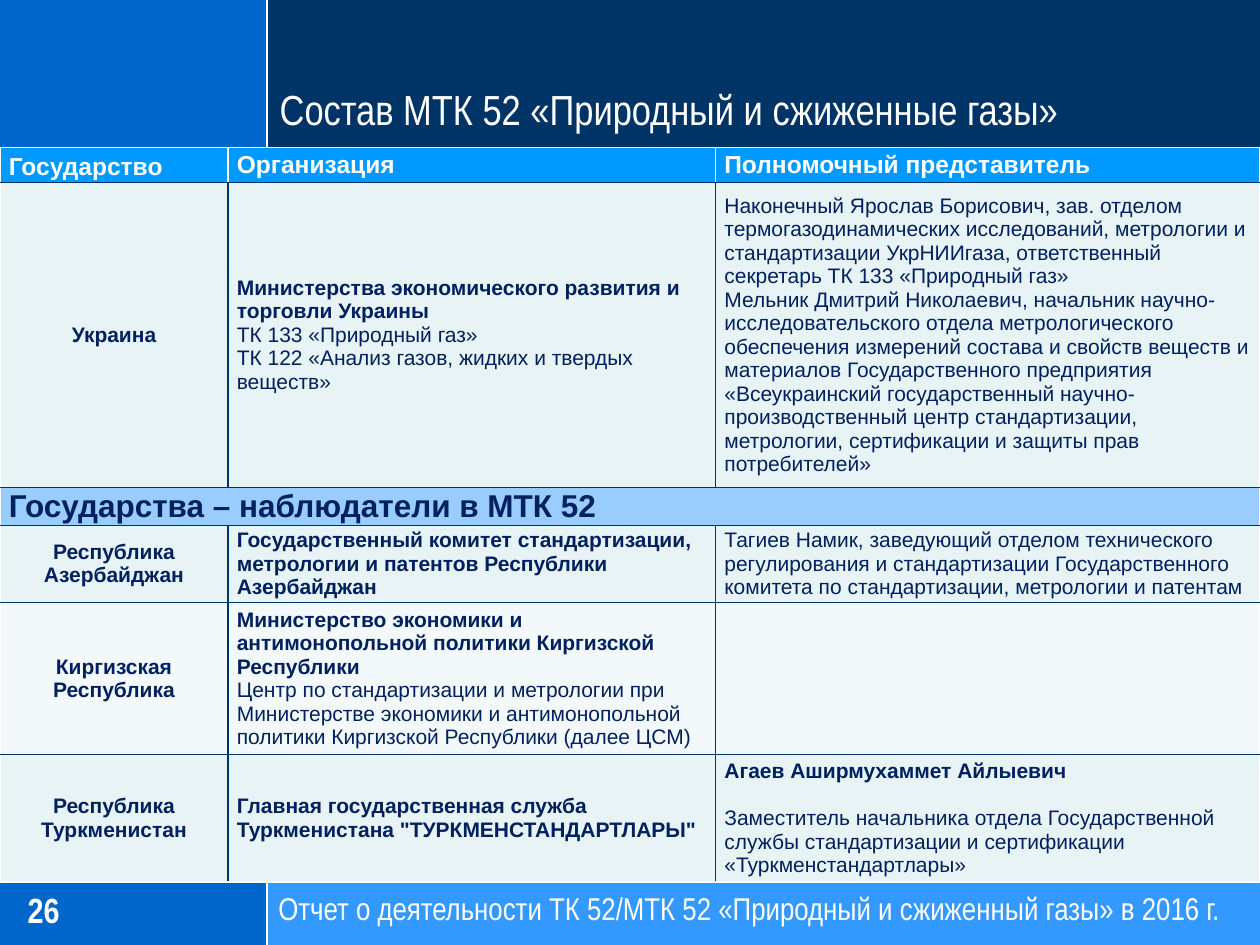
from lxml.etree import SubElement
from pptx import Presentation
from pptx.dml.color import RGBColor
from pptx.enum.shapes import MSO_CONNECTOR, MSO_SHAPE
from pptx.enum.text import MSO_ANCHOR, PP_ALIGN
from pptx.oxml.ns import qn
from pptx.util import Inches, Pt

WHITE, NAVY, BLUE, SKY = "FFFFFF", "003366", "0066CC", "3399FF"
HEADER_FILL, SECTION_FILL, ROW_FILL, PALE_FILL = "0099FF", "99CCFF", "E7F3F4", "F3F9FA"
TEXT_COLOR = "002060"
SPLIT, HEADER_BOTTOM, FOOTER_TOP = 2.12, 1.18, 6.91

COLUMN_WIDTHS = [1.81, 3.87, 4.32]
ROW_HEIGHTS = [0.28, 2.42, 0.3, 0.61, 1.21, 1.01]
ROW_FILLS = [HEADER_FILL, ROW_FILL, SECTION_FILL, ROW_FILL, PALE_FILL, ROW_FILL]
HEADER_ROW, SECTION_ROW = 0, 2

# Each cell is a list of paragraphs: (text, bold)
ROWS = [
    [[("Государство", True)], [("Организация", True)],
     [("Полномочный представитель", True)]],
    [[("Украина", True)],
     [("Министерства экономического развития и торговли Украины", True),
      ("ТК 133 «Природный газ»", False),
      ("ТК 122 «Анализ газов, жидких и твердых веществ»", False)],
     [("Наконечный Ярослав Борисович, зав. отделом термогазодинамических "
       "исследований, метрологии и стандартизации УкрНИИгаза, ответственный "
       "секретарь ТК 133 «Природный газ»", False),
      ("Мельник Дмитрий Николаевич, начальник научно-исследовательского отдела "
       "метрологического обеспечения измерений состава и свойств веществ и "
       "материалов Государственного предприятия «Всеукраинский государственный "
       "научно-производственный центр стандартизации, метрологии, сертификации "
       "и защиты прав потребителей»", False)]],
    [[("Государства – наблюдатели в МТК 52", True)], [], []],
    [[("Республика Азербайджан", True)],
     [("Государственный комитет стандартизации, метрологии и патентов "
       "Республики Азербайджан", True)],
     [("Тагиев Намик, заведующий отделом технического регулирования и "
       "стандартизации Государственного комитета по стандартизации, метрологии "
       "и патентам", False)]],
    [[("Киргизская Республика", True)],
     [("Министерство экономики и антимонопольной политики Киргизской "
       "Республики", True),
      ("Центр по стандартизации и метрологии при Министерстве экономики и "
       "антимонопольной политики Киргизской Республики (далее ЦСМ)", False)],
     []],
    [[("Республика Туркменистан", True)],
     [("Главная государственная служба Туркменистана "
       "\"ТУРКМЕНСТАНДАРТЛАРЫ\"", True)],
     [("Агаев Аширмухаммет Айлыевич", True),
      ("Заместитель начальника отдела Государственной службы стандартизации и "
       "сертификации «Туркменстандартлары»", False)]],
]


def color(value):
    return RGBColor.from_string(value)


def add_band(slide, left, top, width, height, fill):
    shape = slide.shapes.add_shape(
        MSO_SHAPE.RECTANGLE, Inches(left), Inches(top), Inches(width), Inches(height))
    shape.shadow.inherit = False
    shape.fill.solid()
    shape.fill.fore_color.rgb = color(fill)
    shape.line.fill.background()


def add_rule(slide, x1, y1, x2, y2):
    line = slide.shapes.add_connector(
        MSO_CONNECTOR.STRAIGHT, Inches(x1), Inches(y1), Inches(x2), Inches(y2))
    line.line.color.rgb = color(WHITE)
    line.line.width = Pt(1.25)
    SubElement(line._element.spPr, qn("a:effectLst"))


def add_run(paragraph, text, size, font_name, font_color, bold=False):
    run = paragraph.add_run()
    run.text = text
    run.font.size = Pt(size)
    run.font.name = font_name
    run.font.bold = bold
    run.font.color.rgb = color(font_color)


def add_label(slide, left, top, width, height, text, size,
              anchor=MSO_ANCHOR.MIDDLE, align=PP_ALIGN.LEFT, bold=False):
    box = slide.shapes.add_textbox(Inches(left), Inches(top), Inches(width), Inches(height))
    frame = box.text_frame
    frame.word_wrap = True
    frame.vertical_anchor = anchor
    frame.margin_left = frame.margin_right = frame.margin_top = frame.margin_bottom = 0
    paragraph = frame.paragraphs[0]
    paragraph.alignment = align
    add_run(paragraph, text, size, "Arial Narrow", WHITE, bold)


def set_borders(cell, **edges):
    """Give each named edge (L, R, T, B) a 1 pt line; call before setting the fill."""
    properties = cell._tc.get_or_add_tcPr()
    for edge in "LRTB":
        line = SubElement(properties, qn(f"a:ln{edge}"), w=str(Pt(1)))
        fill = SubElement(line, qn("a:solidFill"))
        SubElement(fill, qn("a:srgbClr"), val=edges[edge])


def fill_cell(cell, row, column, paragraphs):
    last_row, last_column = len(ROWS) - 1, len(COLUMN_WIDTHS) - 1
    inner = WHITE if row == HEADER_ROW else NAVY
    set_borders(
        cell,
        L=WHITE if column == 0 else inner,
        R=WHITE if column == last_column or row == SECTION_ROW else inner,
        T=WHITE if row == 0 else NAVY,
        B=WHITE if row == last_row else NAVY)
    cell.fill.solid()
    cell.fill.fore_color.rgb = color(ROW_FILLS[row])
    cell.vertical_anchor = MSO_ANCHOR.MIDDLE
    cell.margin_left = cell.margin_right = Inches(0.07)
    cell.margin_top = cell.margin_bottom = 0

    size = {HEADER_ROW: 14, SECTION_ROW: 18}.get(row, 12)
    font_color = WHITE if row == HEADER_ROW else TEXT_COLOR
    centered = column == 0 and row not in (HEADER_ROW, SECTION_ROW)
    frame = cell.text_frame
    for index, (text, bold) in enumerate(paragraphs):
        paragraph = frame.paragraphs[0] if index == 0 else frame.add_paragraph()
        paragraph.alignment = PP_ALIGN.CENTER if centered else PP_ALIGN.LEFT
        if row == HEADER_ROW and column == 0:
            paragraph.line_spacing = 1.15
        if index and (row, column) == (last_row, last_column):
            paragraph.space_before = Pt(13.5)
        add_run(paragraph, text, size, "Arial", font_color, bold)


def add_members_table(slide):
    table = slide.shapes.add_table(
        len(ROWS), len(COLUMN_WIDTHS), Inches(0), Inches(1.17),
        Inches(sum(COLUMN_WIDTHS)), Inches(sum(ROW_HEIGHTS))).table
    for column, width in zip(table.columns, COLUMN_WIDTHS):
        column.width = Inches(width)
    for row, height in zip(table.rows, ROW_HEIGHTS):
        row.height = Inches(height)
    table.cell(SECTION_ROW, 0).merge(table.cell(SECTION_ROW, len(COLUMN_WIDTHS) - 1))
    for row, cells in enumerate(ROWS):
        for column, paragraphs in enumerate(cells):
            fill_cell(table.cell(row, column), row, column, paragraphs)


def main():
    presentation = Presentation()
    presentation.slide_width, presentation.slide_height = Inches(10), Inches(7.5)
    slide = presentation.slides.add_slide(presentation.slide_layouts[6])

    for top, bottom, right_fill in ((FOOTER_TOP, 7.5, SKY), (0, HEADER_BOTTOM, NAVY)):
        add_band(slide, 0, top, SPLIT, bottom - top, BLUE)
        add_band(slide, SPLIT, top, 10 - SPLIT, bottom - top, right_fill)
        add_rule(slide, SPLIT, top, SPLIT, bottom)
    for y in (FOOTER_TOP, HEADER_BOTTOM):
        add_rule(slide, 0, y, 10, y)

    add_label(slide, 2.22, 0.56, 7.76, 0.5, "Состав МТК 52 «Природный и сжиженные газы»",
              24, anchor=MSO_ANCHOR.BOTTOM)
    add_label(slide, 0.22, 6.96, 1.63, 0.52, "26", 20, bold=True)
    add_label(slide, 2.14, 6.91, 7.61, 0.59,
              "Отчет о деятельности ТК 52/МТК 52 «Природный и сжиженный газы» в 2016 г.",
              18, align=PP_ALIGN.CENTER)
    add_members_table(slide)
    presentation.save("out.pptx")


if __name__ == "__main__":
    main()
